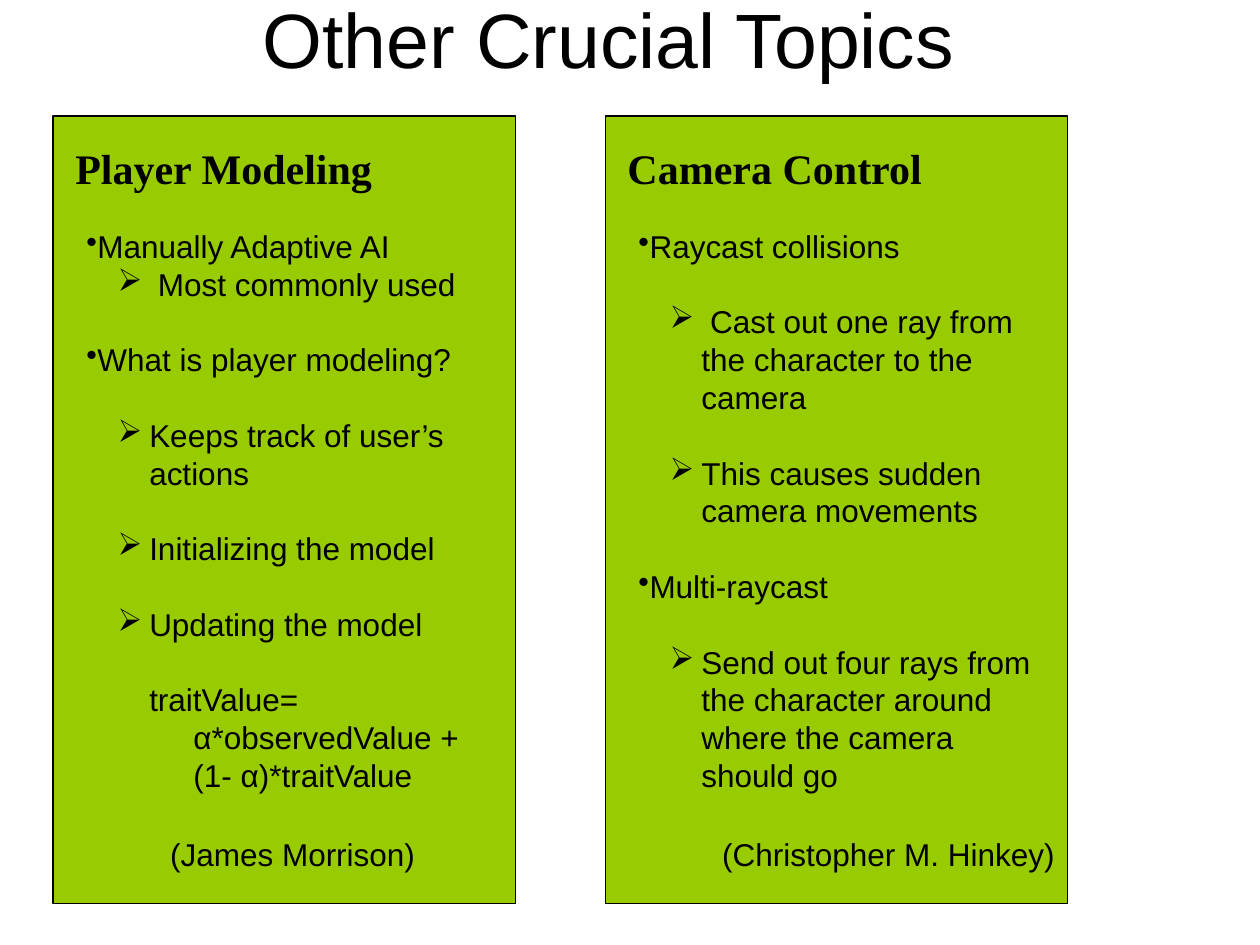
from pptx import Presentation
from pptx.dml.color import RGBColor
from pptx.enum.shapes import MSO_SHAPE as Preset
from pptx.enum.text import MSO_ANCHOR as Anchor, PP_ALIGN as Align
from pptx.oxml.xmlchemy import OxmlElement
from pptx.util import Cm, Pt

BLACK = RGBColor(0x00, 0x00, 0x00)
GREEN = RGBColor(0x99, 0xCC, 0x00)
LINE_FACTOR = 1.2
BODY_SIZE = 18

LEVELS = {
    "topic": (0, 0, "•"),
    "detail": (1.27, -0.64, "➢"),
    "formula": (1.27, 0, None),
    "term": (2.16, 0, None),
}

COLUMNS = [
    {
        "heading": ("Player Modeling", 6.55),
        "credit": ("(James Morrison)", 5.51),
        "body_height": 14.1,
        "points": [
            ("topic", False, "Manually Adaptive AI"),
            ("detail", False, " Most commonly used"),
            ("topic", True, "What is player modeling?"),
            ("detail", True, "Keeps track of user’s actions"),
            ("detail", True, "Initializing the model"),
            ("detail", True, "Updating the model"),
            ("formula", True, "traitValue="),
            ("term", False, "α*observedValue +"),
            ("term", False, "(1- α)*traitValue"),
        ],
    },
    {
        "heading": ("Camera Control", 6.5),
        "credit": ("(Christopher M. Hinkey)", 7.29),
        "body_height": 13.34,
        "points": [
            ("topic", False, "Raycast collisions"),
            ("detail", True, " Cast out one ray from the character to the camera"),
            ("detail", True, "This causes sudden camera movements"),
            ("topic", True, "Multi-raycast"),
            ("detail", True, "Send out four rays from the character around "
                             "where the camera should go"),
        ],
    },
]


def add_frame(left, top, width, height, wrap):
    frame = slide.shapes.add_textbox(Cm(left), Cm(top), Cm(width), Cm(height)).text_frame
    frame.word_wrap = wrap
    return frame


def write(paragraph, text, size=BODY_SIZE, font="Arial", bold=False):
    paragraph.line_spacing = Pt(size * LINE_FACTOR)
    run = paragraph.add_run()
    run.text = text
    run.font.size = Pt(size)
    run.font.name = font
    run.font.bold = bold
    run.font.color.rgb = BLACK


presentation = Presentation()
presentation.slide_width = Cm(25.4)
presentation.slide_height = Cm(19.05)
slide = presentation.slides.add_slide(presentation.slide_layouts[6])

title = add_frame(0.84, -0.84, 22.86, 3.18, True)
title.vertical_anchor = Anchor.MIDDLE
title.paragraphs[0].alignment = Align.CENTER
write(title.paragraphs[0], "Other Crucial Topics", 44)

for index, column in enumerate(COLUMNS):
    left = 1.07 + index * 11.13

    panel = slide.shapes.add_shape(Preset.RECTANGLE, Cm(left), Cm(2.34), Cm(9.32), Cm(15.88))
    panel.shadow.inherit = False
    panel.fill.solid()
    panel.fill.fore_color.rgb = GREEN
    panel.line.color.rgb = BLACK
    panel.line.width = Pt(0.75)

    text, width = column["heading"]
    heading = add_frame(left + 0.2, 2.74, width, 1.27, False)
    write(heading.paragraphs[0], text, 24, "Times New Roman", True)

    body = add_frame(left + 0.42, 4.45, 8.51, column["body_height"], True)
    for number, (level, gap, text) in enumerate(column["points"]):
        paragraph = body.add_paragraph() if number else body.paragraphs[0]
        write(paragraph, text)
        if gap:
            paragraph.space_before = Pt(BODY_SIZE * LINE_FACTOR)
        margin, indent, bullet = LEVELS[level]
        properties = paragraph._p.get_or_add_pPr()
        properties.set("marL", str(Cm(margin)))
        properties.set("indent", str(Cm(indent)))
        if bullet:
            mark = OxmlElement("a:buChar")
            mark.set("char", bullet)
            properties.append(mark)

    text, width = column["credit"]
    credit = add_frame(left + 2.11, 16.71, width, 1.02, False)
    write(credit.paragraphs[0], text)

presentation.save("out.pptx")
